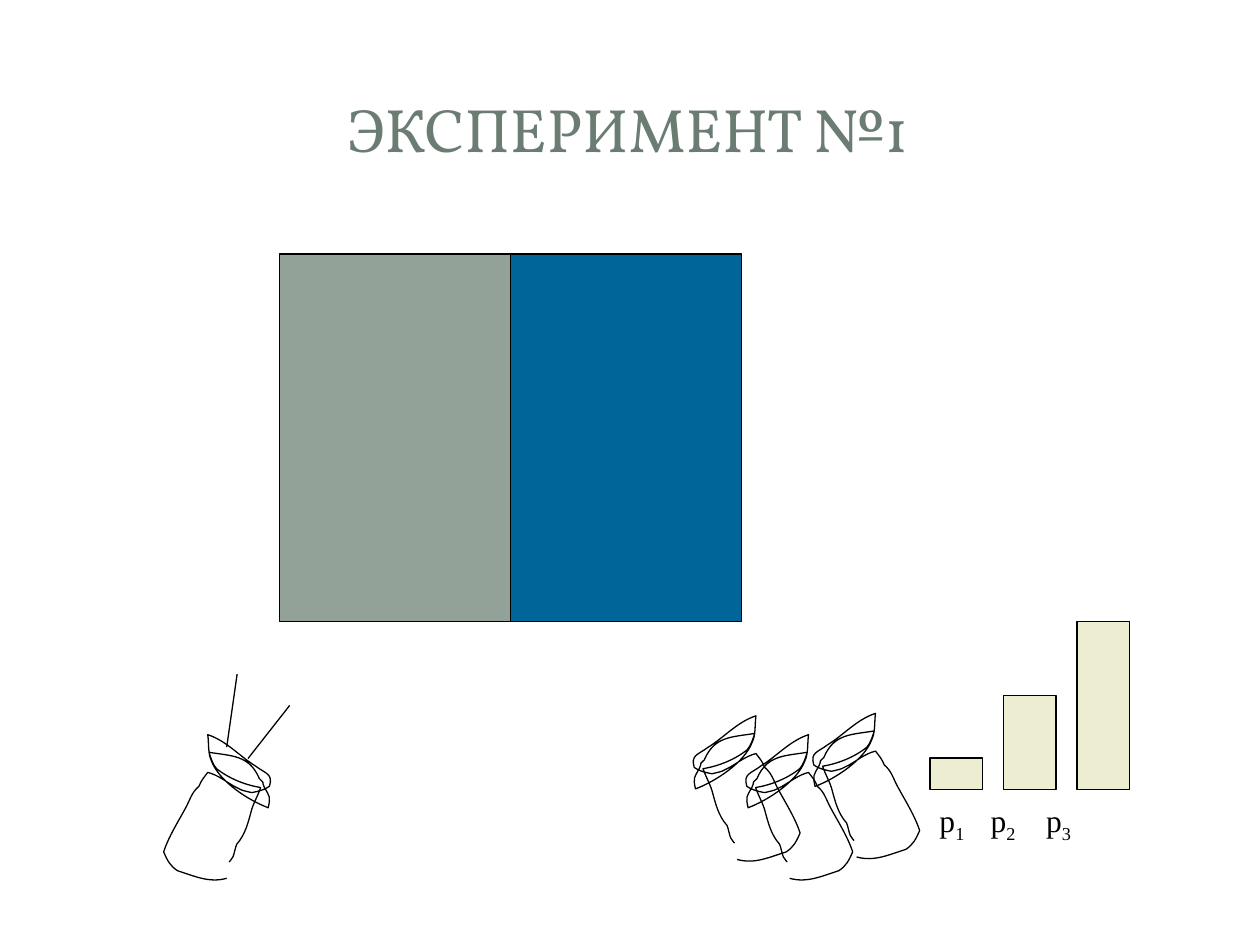
from dataclasses import dataclass
from lxml.etree import SubElement
from pptx import Presentation
from pptx.dml.color import RGBColor
from pptx.enum.shapes import MSO_CONNECTOR, MSO_SHAPE
from pptx.enum.text import MSO_ANCHOR, PP_ALIGN
from pptx.oxml.ns import qn
from pptx.util import Cm, Pt


@dataclass(frozen=True)
class Theme:
    title: RGBColor = RGBColor(0x6B, 0x7D, 0x72)
    ink: RGBColor = RGBColor(0, 0, 0)
    gray: RGBColor = RGBColor(0x93, 0xA2, 0x99)
    blue: RGBColor = RGBColor(0x00, 0x66, 0x99)
    cream: RGBColor = RGBColor(0xEC, 0xED, 0xD1)
    title_font: str = "Vollkorn"
    label_font: str = "Times New Roman"
    title_size: Pt = Pt(35)
    label_size: Pt = Pt(18)
    stroke: Pt = Pt(0.75)


THEME = Theme()

# Content (lengths in cm)
TITLE = "ЭКСПЕРИМЕНТ №1"
PANEL_COLORS = [THEME.gray, THEME.blue]
PANEL_LEFT, PANEL_TOP, PANEL_WIDTH, PANEL_HEIGHT = 5.63, 5.12, 4.66, 7.41
BAR_HEIGHTS = [0.64, 1.9, 3.39]
BAR_LEFT, BAR_BASE, BAR_WIDTH, BAR_STEP = 18.75, 15.92, 1.06, 1.48
LABELS = [("p", "1"), ("p", "2"), ("p", "3")]
LABEL_TABS = [1.03, 2.15]
STRAWS = [((4.57, 15.06), (4.78, 13.59)), ((5, 15.29), (5.84, 14.22))]

# Jars: left, top, mirrored
JARS = [(16.33, 14.38, False), (14.98, 14.81, False),
        (13.92, 14.43, False), (3.3, 14.81, True)]
JAR_UNIT = Cm(0.0254)
JAR_WIDTH = 87
JAR_START = (37, 114)
# Each row is one Bézier curve: two control points and an end point
JAR_CURVES = [
    [(51, 118), (63, 112), (76, 108)],
    [(82, 104), (84, 100), (87, 93)],
    [(83, 81), (76, 70), (70, 59)],
    [(66, 52), (65, 46), (59, 41)],
    [(57, 36), (55, 34), (52, 30)],
    [(44, 32), (38, 37), (31, 41)],
    [(29, 42), (27, 43), (25, 44)],
    [(22, 45), (17, 46), (17, 46)],
    [(12, 45), (7, 44), (3, 41)],
    [(0, 31), (6, 31), (14, 25)],
    [(27, 17), (37, 5), (52, 0)],
    [(51, 7), (52, 15), (49, 21)],
    [(43, 37), (20, 52), (4, 58)],
    [(2, 49), (3, 49), (7, 42)],
    [(10, 35), (6, 40), (11, 35)],
    [(19, 16), (33, 17), (51, 14)],
    [(50, 17), (48, 24), (45, 27)],
    [(35, 35), (22, 40), (10, 42)],
    [(12, 48), (15, 53), (17, 59)],
    [(20, 70), (22, 79), (29, 87)],
    [(30, 89), (31, 95), (32, 97)],
    [(33, 99), (35, 101), (35, 101)],
]


def set_stroke(shape):
    shape.line.color.rgb = THEME.ink
    shape.line.width = THEME.stroke


def add_block(page, left, top, width, height, color):
    block = page.shapes.add_shape(
        MSO_SHAPE.RECTANGLE, Cm(left), Cm(top), Cm(width), Cm(height))
    block.shadow.inherit = False
    block.fill.solid()
    block.fill.fore_color.rgb = color
    set_stroke(block)


def add_jar(page, left, top, mirrored):
    def place(point):
        x, y = point
        return (JAR_WIDTH - x if mirrored else x), y

    builder = page.shapes.build_freeform(*place(JAR_START), scale=JAR_UNIT)
    points = [place(point) for curve in JAR_CURVES for point in curve]
    builder.add_line_segments(points, close=False)
    jar = builder.convert_to_shape(Cm(left), Cm(top))
    jar.shadow.inherit = False
    jar.fill.background()
    set_stroke(jar)

    # Join every three straight segments into one Bézier curve
    outline = next(jar.element.iter(qn("a:path")))
    segments = outline.findall(qn("a:lnTo"))
    for first in range(0, len(segments), 3):
        curve = SubElement(outline, qn("a:cubicBezTo"))
        for segment in segments[first:first + 3]:
            curve.append(segment[0])
            outline.remove(segment)


def add_straw(page, start, end):
    straw = page.shapes.add_connector(
        MSO_CONNECTOR.STRAIGHT, *(Cm(value) for value in start + end))
    set_stroke(straw)
    SubElement(straw.element.spPr, qn("a:effectLst"))


def add_title(page):
    box = page.shapes.add_textbox(Cm(1.19), Cm(1.14), Cm(22.94), Cm(2.9))
    frame = box.text_frame
    frame.word_wrap = True
    frame.vertical_anchor = MSO_ANCHOR.MIDDLE
    frame.text = TITLE
    paragraph = frame.paragraphs[0]
    paragraph.alignment = PP_ALIGN.CENTER
    font = paragraph.runs[0].font
    font.name, font.size = THEME.title_font, THEME.title_size
    font.color.rgb = THEME.title


def add_labels(page):
    box = page.shapes.add_textbox(Cm(18.69), Cm(16.03), Cm(4.52), Cm(1.27))
    box.text_frame.word_wrap = False
    paragraph = box.text_frame.paragraphs[0]
    properties = paragraph._p.get_or_add_pPr()
    tabs = SubElement(properties, qn("a:tabLst"))
    for position in LABEL_TABS:
        SubElement(tabs, qn("a:tab"), pos=str(Cm(position)), algn="l")
    for index, (letter, number) in enumerate(LABELS):
        lead = "\t" if index else ""
        for text, baseline in [(lead + letter, "0"), (number, "-25000")]:
            span = paragraph.add_run()
            span.text = text
            span.font.name, span.font.size = THEME.label_font, THEME.label_size
            span.font.color.rgb = THEME.ink
            span.font._element.set("baseline", baseline)


def main():
    deck = Presentation()
    deck.slide_width, deck.slide_height = Cm(25.4), Cm(19.05)
    page = deck.slides.add_slide(deck.slide_layouts[6])

    add_title(page)

    # Two-colour chamber
    for index, color in enumerate(PANEL_COLORS):
        add_block(page, PANEL_LEFT + index * PANEL_WIDTH, PANEL_TOP,
                  PANEL_WIDTH, PANEL_HEIGHT, color)

    # Jars and straws
    for jar in JARS:
        add_jar(page, *jar)
    for start, end in STRAWS:
        add_straw(page, start, end)

    # Probability bars and their labels
    for index, height in enumerate(BAR_HEIGHTS):
        add_block(page, BAR_LEFT + index * BAR_STEP, BAR_BASE - height,
                  BAR_WIDTH, height, THEME.cream)
    add_labels(page)

    deck.save("out.pptx")


if __name__ == "__main__":
    main()
